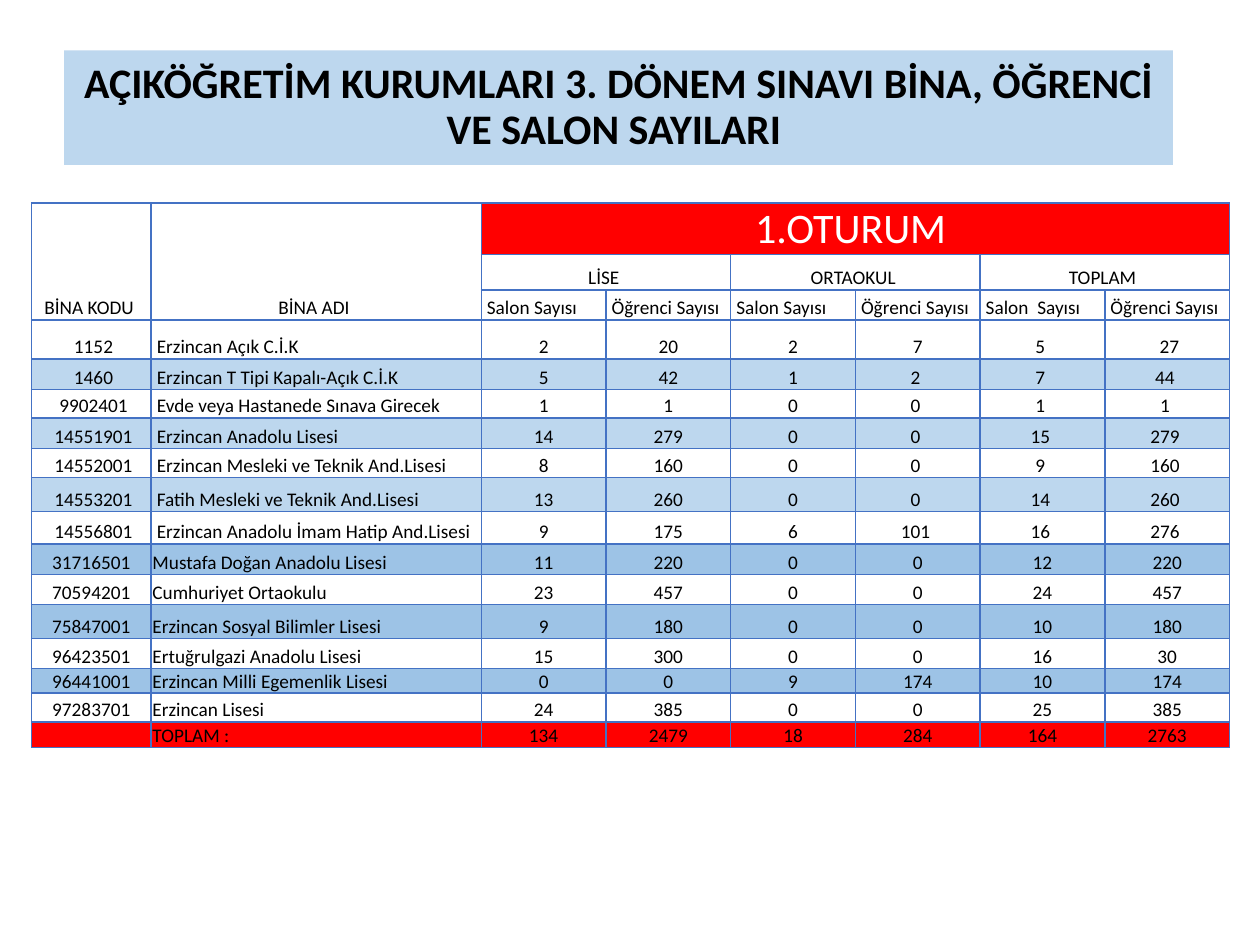
import pptx
import pptx.dml.color
import pptx.enum.text
import pptx.oxml.ns
import pptx.util
from lxml import etree
from pptx.util import Inches

COLORS = {
    "light": "BDD7EE", "medium": "9DC3E6", "red": "FF0000",
    "border": "4472C4", "black": "000000", "white": "FFFFFF",
}
FONT = "Calibri"
NBSP = chr(160)
CENTER = pptx.enum.text.PP_ALIGN.CENTER
LEFT = pptx.enum.text.PP_ALIGN.LEFT
CELL_FORMAT = {
    "margin_left": Inches(0.01), "margin_right": Inches(0.01),
    "margin_top": Inches(0.01), "margin_bottom": 0,
    "vertical_anchor": pptx.enum.text.MSO_ANCHOR.BOTTOM,
}

TITLE = "AÇIKÖĞRETİM KURUMLARI 3. DÖNEM SINAVI BİNA, ÖĞRENCİ VE SALON SAYILARI "
COLUMN_WIDTHS = [0.95, 2.62] + [0.99] * 6
ROW_HEIGHTS = [0.41, 0.28, 0.24, 0.31, 0.24, 0.23, 0.24, 0.23, 0.27,
               0.26, 0.24, 0.24, 0.27, 0.24, 0.19, 0.23, 0.2]
# Row, column, rows spanned, columns spanned, text
MERGED_HEADERS = [
    (0, 0, 3, 1, "BİNA KODU"), (0, 1, 3, 1, "BİNA ADI"),
    (0, 2, 1, 6, "1.OTURUM"), (1, 2, 1, 2, "LİSE"),
    (1, 4, 1, 2, "ORTAOKUL"), (1, 6, 1, 2, "TOPLAM"),
]
SUBHEADERS = ["Salon Sayısı", "Öğrenci Sayısı", "Salon Sayısı",
              "Öğrenci Sayısı", "Salon  Sayısı", "Öğrenci Sayısı"]
# Names and numbers in the first group are padded with no-break spaces
PADDED_BUILDINGS = [
    ("1152", "Erzincan Açık C.İ.K", 2, 20, 2, 7, 5, 27),
    ("1460", "Erzincan T Tipi Kapalı-Açık C.İ.K", 5, 42, 1, 2, 7, 44),
    ("9902401", "Evde veya Hastanede Sınava Girecek", 1, 1, 0, 0, 1, 1),
    ("14551901", "Erzincan Anadolu Lisesi", 14, 279, 0, 0, 15, 279),
    ("14552001", "Erzincan Mesleki ve Teknik And.Lisesi", 8, 160, 0, 0, 9, 160),
    ("14553201", "Fatih Mesleki ve Teknik And.Lisesi", 13, 260, 0, 0, 14, 260),
    ("14556801", "Erzincan Anadolu İmam Hatip And.Lisesi", 9, 175, 6, 101, 16, 276),
]
PLAIN_BUILDINGS = [
    ("31716501", "Mustafa Doğan Anadolu Lisesi", 11, 220, 0, 0, 12, 220),
    ("70594201", "Cumhuriyet Ortaokulu", 23, 457, 0, 0, 24, 457),
    ("75847001", "Erzincan Sosyal Bilimler Lisesi", 9, 180, 0, 0, 10, 180),
    ("96423501", "Ertuğrulgazi Anadolu Lisesi", 15, 300, 0, 0, 16, 30),
    ("96441001", "Erzincan Milli Egemenlik Lisesi", 0, 0, 9, 174, 10, 174),
    ("97283701", "Erzincan Lisesi", 24, 385, 0, 0, 25, 385),
]
TOTALS = ("", "TOPLAM :", 134, 2479, 18, 284, 164, 2763)


def rgb(name):
    return pptx.dml.color.RGBColor.from_string(COLORS[name])


def set_values(target, values):
    for name, value in values.items():
        setattr(target, name, value)


def write(paragraph, text, size, color="black", align=CENTER, bold=False):
    paragraph.alignment = align
    if text:
        run = paragraph.add_run()
        run.text = text
        set_values(run.font, {"name": FONT, "size": pptx.util.Pt(size), "bold": bold})
        run.font.color.rgb = rgb(color)
    else:
        # An empty cell needs its own text size to keep the row low
        etree.SubElement(paragraph._p, pptx.oxml.ns.qn("a:endParaRPr"),
                         sz=str(size * 100))


def add_title(slide):
    shape = slide.shapes.add_textbox(Inches(0.51), Inches(0.4), Inches(8.8), Inches(0.91))
    shape.fill.solid()
    shape.fill.fore_color.rgb = rgb("light")
    set_values(shape.text_frame, {
        "word_wrap": True, "vertical_anchor": pptx.enum.text.MSO_ANCHOR.MIDDLE})
    paragraph = shape.text_frame.paragraphs[0]
    paragraph.line_spacing = 0.9
    write(paragraph, TITLE, 24, bold=True)


def add_borders(cell):
    properties = cell._tc.get_or_add_tcPr()
    qn = pptx.oxml.ns.qn
    for side in ("lnL", "lnR", "lnT", "lnB"):
        line = etree.SubElement(properties, qn(f"a:{side}"), w=str(pptx.util.Pt(1)))
        fill = etree.SubElement(line, qn("a:solidFill"))
        etree.SubElement(fill, qn("a:srgbClr"), val=COLORS["border"])


def fill_cell(cell, text, fill=None, size=11, color="black", align=CENTER):
    set_values(cell, CELL_FORMAT)
    if fill:
        cell.fill.solid()
        cell.fill.fore_color.rgb = rgb(fill)
    else:
        cell.fill.background()
    write(cell.text_frame.paragraphs[0], text, size, color, align)


def padded(row, column, text):
    is_first_row = row == 0
    if column < 2 or (is_first_row and column == 7):
        return NBSP + text
    if column > 5 or (column == 5 and not is_first_row):
        return text + NBSP
    return text


def body_rows():
    """Yield the texts and the fill of each row below the headers."""
    for index, building in enumerate(PADDED_BUILDINGS):
        texts = [padded(index, column, str(value)) for column, value in enumerate(building)]
        yield texts, "light" if index % 2 else None
    for index, building in enumerate(PLAIN_BUILDINGS):
        yield building, None if index % 2 else "medium"
    yield TOTALS, "red"


def add_headers(table):
    for row, column, row_span, column_span, text in MERGED_HEADERS:
        cell = table.cell(row, column)
        cell.merge(table.cell(row + row_span - 1, column + column_span - 1))
        session = {"fill": "red", "size": 24, "color": "white"} if column_span == 6 else {}
        fill_cell(cell, text + NBSP, **session)
    for column, text in enumerate(SUBHEADERS, 2):
        fill_cell(table.cell(2, column), NBSP + text, align=LEFT)


def add_buildings_table(slide):
    table = slide.shapes.add_table(
        len(ROW_HEIGHTS), len(COLUMN_WIDTHS), Inches(0.25), Inches(1.61),
        Inches(sum(COLUMN_WIDTHS)), Inches(sum(ROW_HEIGHTS))).table
    set_values(table, {"first_row": False, "horz_banding": False})
    for column, width in zip(table.columns, COLUMN_WIDTHS):
        column.width = Inches(width)
    for row, height in zip(table.rows, ROW_HEIGHTS):
        row.height = Inches(height)
    for cell in table.iter_cells():
        add_borders(cell)

    add_headers(table)
    for row, (texts, fill) in enumerate(body_rows(), 3):
        for column, text in enumerate(texts):
            fill_cell(table.cell(row, column), str(text), fill,
                      align=LEFT if column == 1 else CENTER)


def main():
    presentation = pptx.Presentation()
    set_values(presentation, {"slide_width": Inches(10), "slide_height": Inches(7.5)})
    slide = presentation.slides.add_slide(presentation.slide_layouts[6])
    add_title(slide)
    add_buildings_table(slide)
    presentation.save("out.pptx")


if __name__ == "__main__":
    main()
